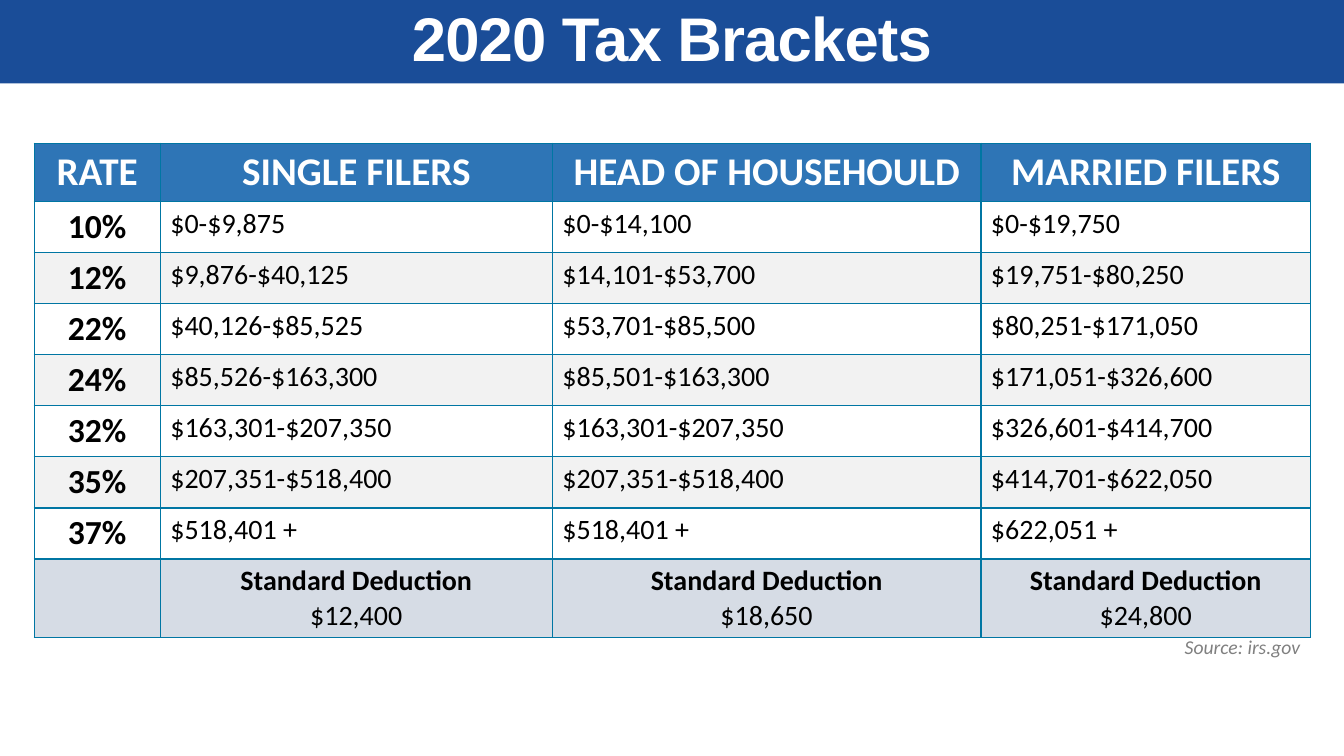
from lxml.etree import SubElement as Sub
from pptx import Presentation
from pptx.dml.color import RGBColor
from pptx.enum.shapes import MSO_SHAPE as Shape
from pptx.enum.text import MSO_ANCHOR as Anchor, MSO_AUTO_SIZE as Auto, PP_ALIGN as Align
from pptx.oxml.ns import qn
from pptx.util import Cm, Pt

WIDE, HIGH = 33.87, 19.05
LEFT, TOP = 0.86, 3.61
COLS = [3.18, 9.88, 10.8, 8.31]
ROW = 1.04

HEADS = ["RATE", "SINGLE FILERS", "HEAD OF HOUSEHOULD", "MARRIED FILERS"]
RATES = [
    ["10%", "$0-$9,875", "$0-$14,100", "$0-$19,750"],
    ["12%", "$9,876-$40,125", "$14,101-$53,700", "$19,751-$80,250"],
    ["22%", "$40,126-$85,525", "$53,701-$85,500", "$80,251-$171,050"],
    ["24%", "$85,526-$163,300", "$85,501-$163,300", "$171,051-$326,600"],
    ["32%", "$163,301-$207,350", "$163,301-$207,350", "$326,601-$414,700"],
    ["35%", "$207,351-$518,400", "$207,351-$518,400", "$414,701-$622,050"],
    ["37%", "$518,401 +", "$518,401 +", "$622,051 +"],
]
DEDUCTS = ["$12,400", "$18,650", "$24,800"]


def color(code):
    return RGBColor.from_string(code)


class Deck:
    """Holds the style and the current slide."""

    head = dict(name="Calibri", size=Pt(28), bold=True, color="FFFFFF")
    rate = dict(name="Calibri", size=Pt(24), bold=True, color="000000")
    body = dict(name="Calibri", size=Pt(20), bold=False, color="000000")
    strong = {**body, "bold": True}
    title = dict(name="Arial", size=Pt(44), bold=True, color="FFFFFF")
    note = dict(name="Calibri", size=Pt(14), italic=True, color="808080")
    edge = "0076A3"

    def __init__(self):
        self.prs = Presentation()
        self.prs.slide_width, self.prs.slide_height = Cm(WIDE), Cm(HIGH)
        self.slide = self.prs.slides.add_slide(self.prs.slide_layouts[6])

    def text(self, para, words, style, align):
        para.alignment = align
        run = para.add_run()
        run.text = words
        for key, value in style.items():
            if key == "color":
                run.font.color.rgb = color(value)
            else:
                setattr(run.font, key, value)
        return run

    def banner(self, words, high, fill):
        box = self.slide.shapes.add_shape(Shape.RECTANGLE, 0, 0, Cm(WIDE), Cm(high))
        box.shadow.inherit = False
        box.fill.solid()
        box.fill.fore_color.rgb = color(fill)
        box.line.fill.background()
        box.text_frame.vertical_anchor = Anchor.MIDDLE
        para = box.text_frame.paragraphs[0]
        para.line_spacing = 0.9
        run = self.text(para, words, self.title, Align.CENTER)
        run._r.get_or_add_rPr().set("spc", "-60")

    def label(self, words, left, top, wide, high):
        box = self.slide.shapes.add_textbox(Cm(left), Cm(top), Cm(wide), Cm(high))
        frame = box.text_frame
        frame.word_wrap = False
        frame.auto_size = Auto.SHAPE_TO_FIT_TEXT
        self.text(frame.paragraphs[0], words, self.note, Align.RIGHT)

    def grid(self, left, top, cols, count, high):
        frame = self.slide.shapes.add_table(
            count, len(cols), Cm(left), Cm(top), Cm(sum(cols)), Cm(count * high))
        for col, wide in zip(frame.table.columns, cols):
            col.width = Cm(wide)
        return frame.table

    def cell(self, cell, lines, fill, align=Align.CENTER):
        # Borders come before the fill in the cell properties
        props = cell._tc.get_or_add_tcPr()
        for side in ("lnL", "lnR", "lnT", "lnB"):
            line = Sub(props, qn(f"a:{side}"), w=str(Pt(1)))
            Sub(Sub(line, qn("a:solidFill")), qn("a:srgbClr"), val=self.edge)
        cell.fill.solid()
        cell.fill.fore_color.rgb = color(fill)
        frame = cell.text_frame
        for i, (words, style) in enumerate(lines):
            para = frame.add_paragraph() if i else frame.paragraphs[0]
            self.text(para, words, style, align)


def main():
    deck = Deck()

    # Tax table: header, striped rates, deductions
    table = deck.grid(LEFT, TOP, COLS, len(RATES) + 2, ROW)
    for x, words in enumerate(HEADS):
        deck.cell(table.cell(0, x), [(words, deck.head)], "2E75B6")
    for y, row in enumerate(RATES, 1):
        fill = "FFFFFF" if y % 2 else "F2F2F2"
        deck.cell(table.cell(y, 0), [(row[0], deck.rate)], fill)
        for x, words in enumerate(row[1:], 1):
            deck.cell(table.cell(y, x), [(words, deck.body)], fill, Align.LEFT)
    last = len(RATES) + 1
    deck.cell(table.cell(last, 0), [], "D6DCE5")
    for x, amount in enumerate(DEDUCTS, 1):
        lines = [("Standard Deduction", deck.strong), (amount, deck.body)]
        deck.cell(table.cell(last, x), lines, "D6DCE5")

    # Title and source
    deck.banner("2020 Tax Brackets", 2.1, "1A4D98")
    deck.label("Source: irs.gov", 29.57, 15.88, 3.45, 0.86)

    deck.prs.save("out.pptx")


if __name__ == "__main__":
    main()
